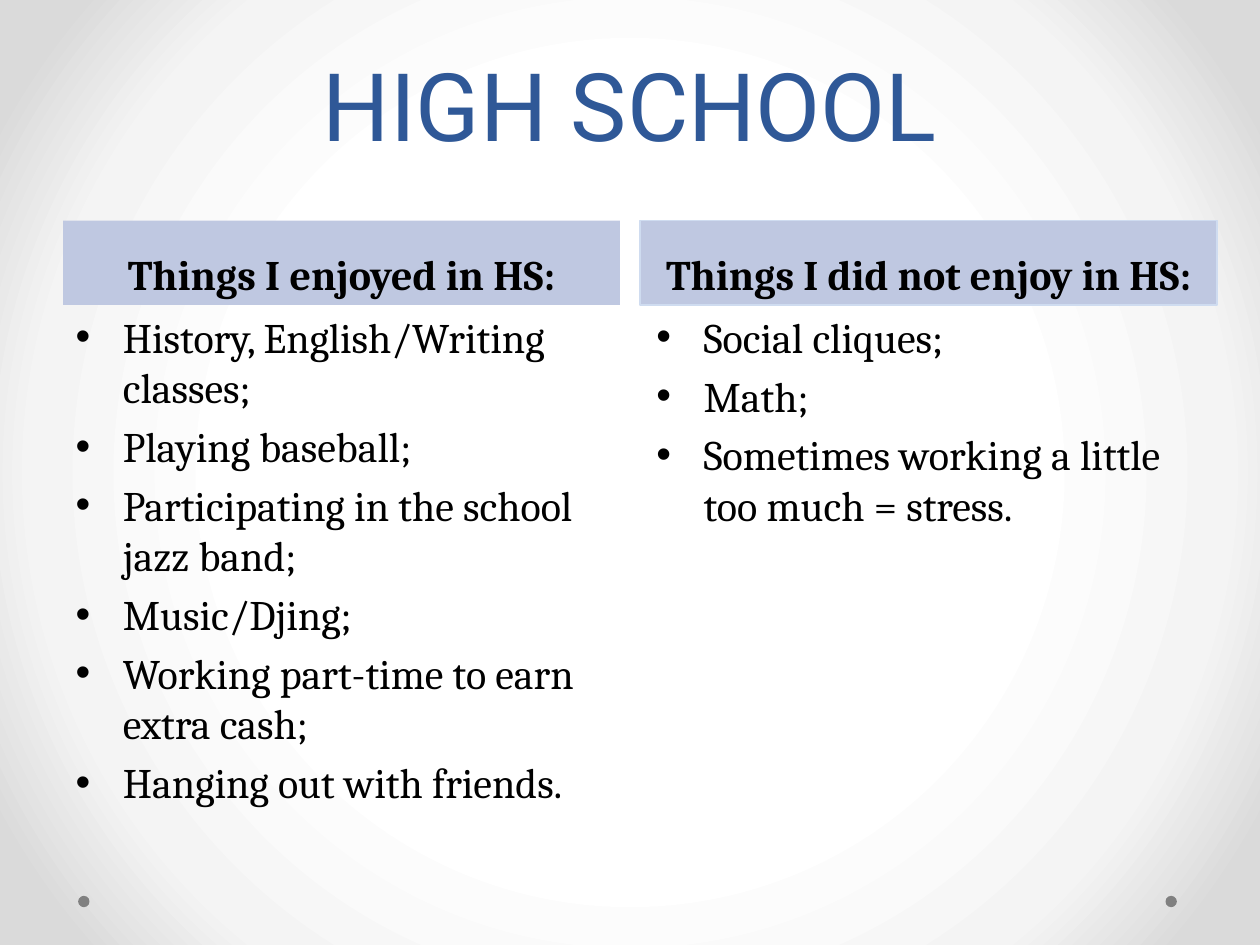
import pptx
import pptx.dml.color
import pptx.enum.shapes
import pptx.enum.text
import pptx.oxml
import pptx.oxml.ns
import pptx.util
from pptx.util import Inches

BLACK = pptx.dml.color.RGBColor(0x00, 0x00, 0x00)
TITLE_BLUE = pptx.dml.color.RGBColor(0x2F, 0x58, 0x97)
HEADING_FILL = pptx.dml.color.RGBColor(0xBF, 0xC8, 0xE1)
HEADING_LINE = pptx.dml.color.RGBColor(0xCF, 0xDC, 0xF0)
DOT_GREY = pptx.dml.color.RGBColor(0x80, 0x80, 0x80)


def place(shape, left, top, width, height):
    shape.left, shape.top = Inches(left), Inches(top)
    shape.width, shape.height = Inches(width), Inches(height)


def write(shape, lines, font_name, size, color, bold=False):
    frame = shape.text_frame
    frame.text = "\n".join(lines)
    frame.word_wrap = True
    frame.auto_size = pptx.enum.text.MSO_AUTO_SIZE.NONE
    for para in frame.paragraphs:
        for span in para.runs:
            span.font.name = font_name
            span.font.size = pptx.util.Pt(size)
            span.font.color.rgb = color
            span.font.bold = bold


deck = pptx.Presentation()
deck.slide_width = Inches(10)
deck.slide_height = Inches(7.5)
page = deck.slides.add_slide(deck.slide_layouts.get_by_name("Comparison"))

page.background.fill.gradient()
gradient = page.element.find(".//" + pptx.oxml.ns.qn("a:gradFill"))
stops = "".join(
    f'<a:gs pos="{percent * 1000}"><a:srgbClr val="{color}"/></a:gs>'
    for percent, color in [(50, "FFFFFF"), (76, "F4F4F4"), (92, "DADADA")]
)
gradient.getparent().replace(gradient, pptx.oxml.parse_xml(
    f'<a:gradFill {pptx.oxml.ns.nsdecls("a")} rotWithShape="1"><a:gsLst>{stops}</a:gsLst>'
    '<a:path path="circle"><a:fillToRect l="50000" t="50000" r="50000" b="50000"/></a:path>'
    '</a:gradFill>'
))

for left in (9.25, 0.62):
    dot = page.shapes.add_shape(
        pptx.enum.shapes.MSO_SHAPE.OVAL, Inches(left), Inches(7.11), Inches(0.09), Inches(0.09)
    )
    dot.shadow.inherit = False
    dot.fill.solid()
    dot.fill.fore_color.rgb = DOT_GREY
    dot.line.fill.background()

title = page.shapes.title
place(title, 0.5, -0.01, 9, 1.33)
write(title, ["HIGH SCHOOL"], "Roboto", 54, TITLE_BLUE)
title.text_frame.vertical_anchor = pptx.enum.text.MSO_ANCHOR.BOTTOM
title.text_frame.paragraphs[0].alignment = pptx.enum.text.PP_ALIGN.CENTER
title.text_frame.paragraphs[0].line_spacing = pptx.util.Pt(58)

columns = [
    (1, 0.5, 4.42, 0.5, "Things I enjoyed in HS:", [
        "History, English/Writing classes;",
        "Playing baseball;",
        "Participating in the school jazz band;",
        "Music/Djing;",
        "Working part-time to earn extra cash;",
        "Hanging out with friends.",
    ]),
    (3, 5.08, 4.58, 5.11, "Things I did not enjoy in HS:", [
        "Social cliques;",
        "Math;",
        "Sometimes working a little too much = stress.",
    ]),
]
for index, heading_left, heading_width, list_left, heading_text, items in columns:
    heading = page.placeholders[index]
    place(heading, heading_left, 1.75, heading_width, 0.67)
    heading.fill.solid()
    heading.fill.fore_color.rgb = HEADING_FILL
    write(heading, [heading_text], "Cambria", 24, BLACK, bold=True)
    heading.text_frame.vertical_anchor = pptx.enum.text.MSO_ANCHOR.BOTTOM
    heading.text_frame.paragraphs[0].alignment = pptx.enum.text.PP_ALIGN.CENTER

    bullets = page.placeholders[index + 1]
    place(bullets, list_left, 2.42, 4.42, 4.28)
    write(bullets, items, "Cambria", 24, BLACK)

right_heading = page.placeholders[3]
right_heading.line.color.rgb = HEADING_LINE
right_heading.line.width = pptx.util.Pt(0.75)

deck.save("out.pptx")
